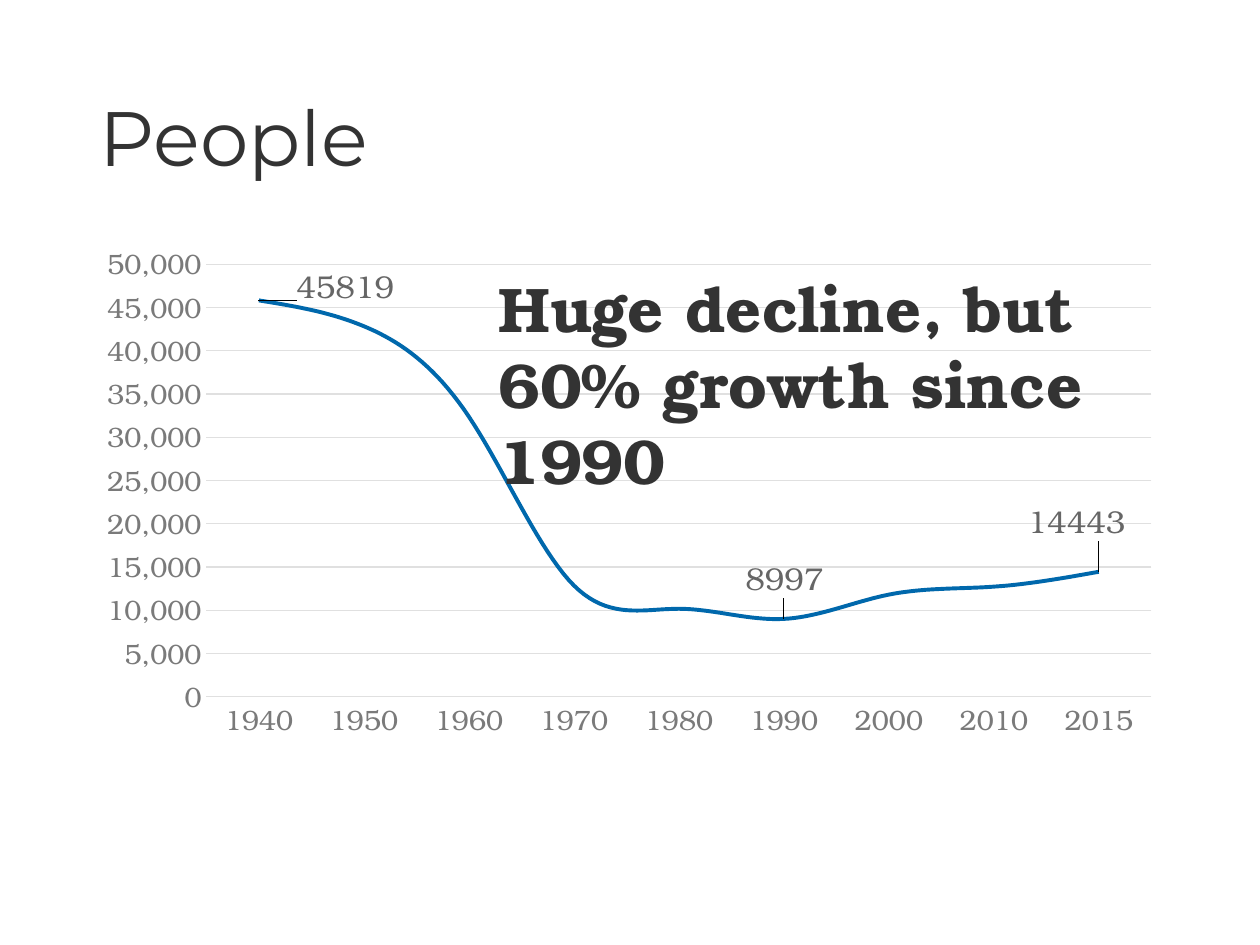
from dataclasses import dataclass

from lxml import etree
from pptx import Presentation
from pptx import util as u
from pptx.chart.data import CategoryChartData
from pptx.dml.color import RGBColor
from pptx.enum import chart as ch
from pptx.enum import text as tx
from pptx.oxml import parse_xml
from pptx.oxml.ns import nsdecls, qn

WIDE, HIGH = u.Inches(10), u.Inches(7.5)
SERIF, SANS = "TeX Gyre Bonum", "Montserrat"
DARK, GREY, PALE, BLUE = "333333", "7A7A7A", "E0E0E0", "0068AC"
EXT = "http://schemas.microsoft.com/office/drawing/2012/chart"


@dataclass
class Box:
    left: float
    top: float
    wide: float
    high: float

    def size(self) -> tuple:
        return (int(self.left * WIDE), int(self.top * HIGH),
                int(self.wide * WIDE), int(self.high * HIGH))


@dataclass
class Label:
    point: int
    right: float
    down: float


TITLE = Box(0.069, 0.053, 0.862, 0.193)
CHART = Box(0.069, 0.247, 0.862, 0.545)
CLAIM = Box(0.386, 0.279, 0.546, 0.175)
PLOT = Box(0.11, 0.06, 0.87, 0.84)
LABELS = [Label(0, 0.03, -0.03), Label(5, -0.04, -0.08), Label(8, -0.07, -0.1)]
YEARS = ["1940", "1950", "1960", "1970", "1980", "1990", "2000", "2010", "2015"]
COUNTS = [45819, 42834, 32384, 12870, 10168, 8997, 11804, 12725, 14443]


def color(code: str) -> RGBColor:
    return RGBColor.from_string(code)


def style(font, size: float, code: str = DARK, face: str = SERIF, bold: bool = False) -> None:
    font.size, font.name, font.bold = u.Pt(size), face, bold
    font.color.rgb = color(code)


def write(frame, words: str, space: float = 1.0, anchor=tx.MSO_ANCHOR.TOP, **look) -> None:
    frame.word_wrap = True
    frame.vertical_anchor = anchor
    para = frame.paragraphs[0]
    para.line_spacing = space
    run = para.add_run()
    run.text = words
    style(run.font, **look)


def stroke(line, code: str, width: float) -> None:
    line.color.rgb = color(code)
    line.width = u.Pt(width)


def layout(**parts):
    node = parse_xml(f"<c:layout {nsdecls('c')}><c:manualLayout/></c:layout>")
    for name, value in parts.items():
        etree.SubElement(node[0], qn(f"c:{name}")).set("val", str(value))
    return node


def place(plot, box: Box) -> None:
    for old in plot.findall(qn("c:layout")):
        plot.remove(old)
    plot.insert(0, layout(layoutTarget="inner", xMode="edge", yMode="edge",
                          x=box.left, y=box.top, w=box.wide, h=box.high))


def mark(series, item: Label) -> None:
    label = series.points[item.point].data_label
    style(label.font, 18, "666666")
    label.position = ch.XL_LABEL_POSITION.RIGHT
    node = series.data_labels._element.xpath(f"c:dLbl[c:idx/@val='{item.point}']")[0]
    node.insert(1, layout(x=item.right, y=item.down))


def lead(labels) -> None:
    labels._element.append(parse_xml(
        f'<c:extLst {nsdecls("c")}><c:ext uri="{{CE6537A1-D6FC-4f65-9D91-7224C49458BB}}" '
        f'xmlns:c15="{EXT}"><c15:showLeaderLines val="1"/></c:ext></c:extLst>'))


def draw(slide, box: Box) -> None:
    data = CategoryChartData(number_format="General")
    data.categories = YEARS
    data.add_series("Series 1", COUNTS)
    chart = slide.shapes.add_chart(ch.XL_CHART_TYPE.LINE, *box.size(), data).chart
    chart.has_legend = chart.has_title = False
    style(chart.font, 10)
    place(chart._chartSpace.chart.plotArea, PLOT)

    years, counts = chart.category_axis, chart.value_axis
    for axis in (years, counts):
        axis.major_tick_mark = axis.minor_tick_mark = ch.XL_TICK_MARK.NONE
        style(axis.tick_labels.font, 16, GREY)
    stroke(years.format.line, PALE, 0.75)
    counts.format.line.fill.background()
    stroke(counts.major_gridlines.format.line, PALE, 0.75)
    counts.minimum_scale, counts.maximum_scale, counts.major_unit = 0, 50000, 5000
    counts.tick_labels.number_format = "#,##0"
    counts.tick_labels.number_format_is_linked = False

    plot = chart.plots[0]
    plot.vary_by_categories = False
    series = plot.series[0]
    series.smooth = True
    series.marker.style = ch.XL_MARKER_STYLE.NONE
    stroke(series.format.line, BLUE, 2.25)
    series.data_labels.show_value = False
    for item in LABELS:
        mark(series, item)
    lead(series.data_labels)


def main() -> None:
    deck = Presentation()
    deck.slide_width, deck.slide_height = WIDE, HIGH
    slide = deck.slides.add_slide(deck.slide_layouts[5])
    title = slide.shapes.title
    title.left, title.top, title.width, title.height = TITLE.size()
    write(title.text_frame, "People", space=0.9, anchor=tx.MSO_ANCHOR.MIDDLE,
          size=44, face=SANS)
    title.text_frame.paragraphs[0].alignment = tx.PP_ALIGN.LEFT
    draw(slide, CHART)
    claim = slide.shapes.add_textbox(*CLAIM.size()).text_frame
    write(claim, "Huge decline, but 60% growth since 1990", size=36, bold=True)
    claim.auto_size = tx.MSO_AUTO_SIZE.SHAPE_TO_FIT_TEXT
    deck.save("out.pptx")


if __name__ == "__main__":
    main()
